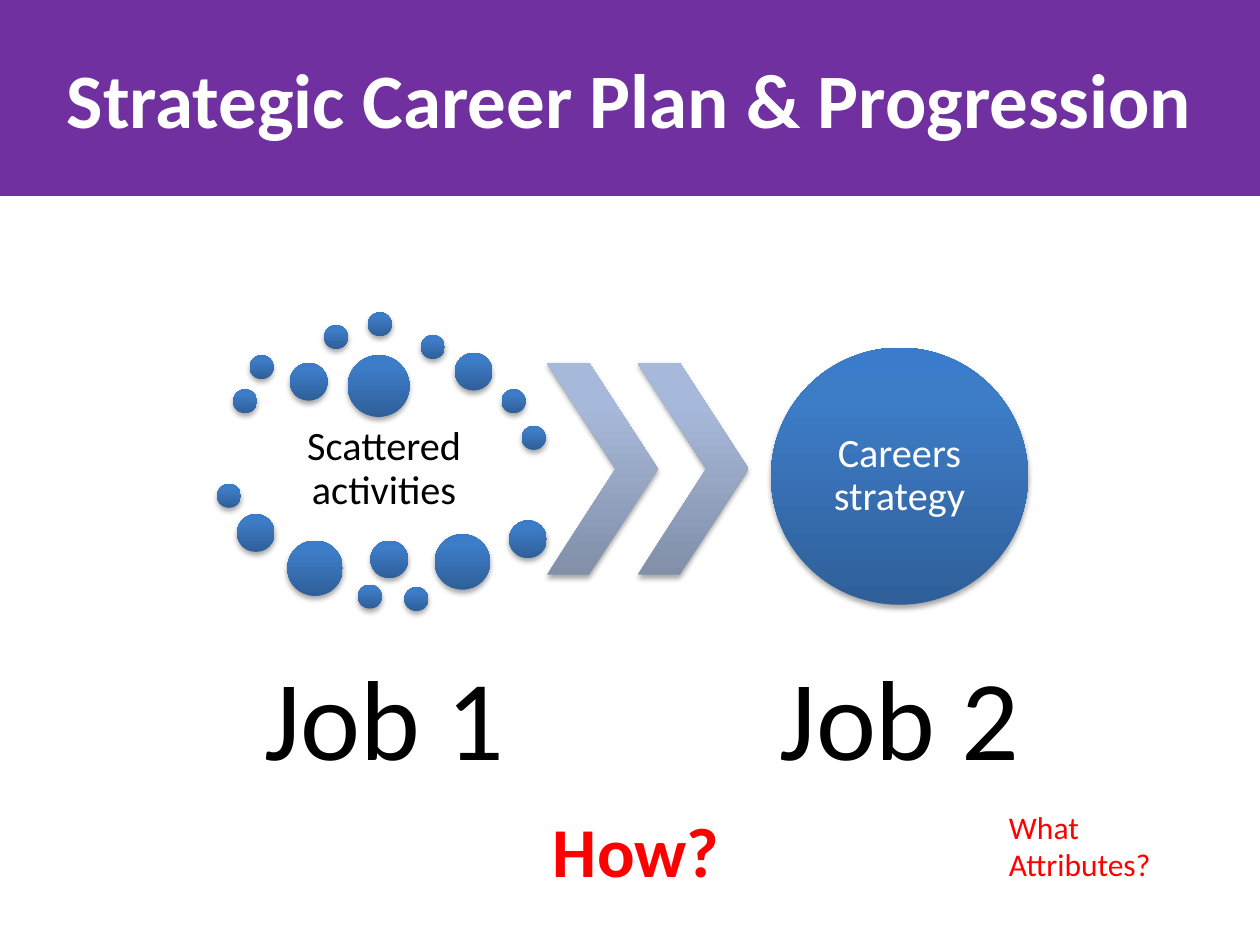
from copy import deepcopy

from lxml.etree import SubElement
from pptx import Presentation
from pptx.dml.color import RGBColor
from pptx.enum.shapes import MSO_SHAPE
from pptx.enum.text import MSO_ANCHOR, MSO_AUTO_SIZE, PP_ALIGN
from pptx.oxml.ns import qn
from pptx.util import Pt

PURPLE, WHITE, BLACK, RED = "7030A0", "FFFFFF", "000000", "FF0000"
# Gradient stops run from the bottom of a shape to its top.
BLUE_STOPS = [(0, "2F5F99"), (0.8, "3D7CC7"), (1, "3A7CCB")]
GREY_STOPS = [(0, "818FA8"), (0.8, "A7B9DA"), (1, "A7BADC")]

# Dot diameter: offsets of the dots from the corner of the scatter.
DOTS = {
    13.7: [(9.2, 44), (18.6, 24.5), (61.2, 7.3), (86.2, 0), (116.5, 13),
           (162.6, 44), (174.1, 64.9), (0, 98), (80.5, 155.6), (107.1, 157)],
    21.6: [(41.6, 28.9), (135.9, 23.1), (11.4, 115.3), (87.7, 130.4),
           (166.9, 118.9)],
    31.7: [(40.2, 130.4), (124.4, 126.8)],
    35.3: [(74.7, 24.5)],
}


def color(value):
    return RGBColor.from_string(value)


def write(frame, text, size, ink, bold=False, align=PP_ALIGN.CENTER,
          anchor=MSO_ANCHOR.MIDDLE, spacing=None, inset=None):
    frame.word_wrap = True
    frame.auto_size = MSO_AUTO_SIZE.NONE
    frame.vertical_anchor = anchor
    if inset is not None:
        frame.margin_left = frame.margin_right = Pt(inset)
        frame.margin_top = frame.margin_bottom = Pt(inset)
    para = frame.paragraphs[0]
    para.alignment = align
    if spacing:
        para.line_spacing = spacing
    span = para.add_run()
    span.text = text
    span.font.name = "Calibri"
    span.font.size = Pt(size)
    span.font.bold = bold
    span.font.color.rgb = color(ink)


def add_text(page, box, text, size, ink, **style):
    shape = page.shapes.add_textbox(*map(Pt, box))
    write(shape.text_frame, text, size, ink, **style)


def add_shadow(shape):
    """Add a soft shadow just below the shape."""
    shape.shadow.inherit = False
    effects = shape._element.spPr.find(qn("a:effectLst"))
    outer = SubElement(effects, qn("a:outerShdw"), blurRad=str(Pt(3.1)),
                       dist=str(Pt(1.8)), dir="5400000", rotWithShape="0")
    ink = SubElement(outer, qn("a:srgbClr"), val=BLACK)
    SubElement(ink, qn("a:alpha"), val="35000")


def add_glossy(page, kind, box, stops):
    """Add a shape with an upward gradient, no line and a shadow."""
    shape = page.shapes.add_shape(kind, *map(Pt, box))
    shape.fill.gradient()
    shape.fill.gradient_angle = 90
    last = shape._element.spPr.findall(".//" + qn("a:gs"))[-1]
    last.addnext(deepcopy(last))
    for stop, (position, ink) in zip(shape.fill.gradient_stops, stops):
        stop.position = position
        stop.color.rgb = color(ink)
    shape.line.fill.background()
    add_shadow(shape)
    return shape


def add_title(page, box):
    title = page.shapes.title
    title.left, title.top, title.width, title.height = map(Pt, box)
    title.fill.solid()
    title.fill.fore_color.rgb = color(PURPLE)
    title.line.color.rgb = color(PURPLE)
    title.line.width = Pt(0.75)
    write(title.text_frame, "Strategic Career Plan & Progression", 44, WHITE,
          bold=True)


def add_scatter(page, left, top):
    add_text(page, (left + 9.2, top + 61.3, 172.8, 56.9),
             "Scattered activities", 23, BLACK, spacing=0.9, inset=2.3)
    for size, offsets in DOTS.items():
        for x, y in offsets:
            add_glossy(page, MSO_SHAPE.OVAL, (left + x, top + y, size, size),
                       BLUE_STOPS)


def add_chevrons(page, left, top, width, height, step):
    for index in range(2):
        chevron = add_glossy(page, MSO_SHAPE.CHEVRON,
                             (left + index * step, top, width, height),
                             GREY_STOPS)
        chevron.adjustments[0] = 0.62


def add_strategy(page, left, top, size):
    add_glossy(page, MSO_SHAPE.OVAL, (left, top, size, size), BLUE_STOPS)
    edge = 21.6
    inner = size - 2 * edge
    add_text(page, (left + edge, top + edge, inner, inner),
             "Careers strategy", 23, WHITE, spacing=0.9, inset=0)


def add_jobs(page, lefts, top, width, height):
    for number, left in enumerate(lefts, 1):
        add_text(page, (left, top, width, height), f"Job {number}", 65, BLACK,
                 spacing=0.9, inset=6.5)


def add_questions(page, top):
    style = {"align": PP_ALIGN.LEFT, "anchor": MSO_ANCHOR.TOP}
    add_text(page, (308.9, top, 113, 55.4), "How?", 40, RED, bold=True, **style)
    add_text(page, (569.5, top, 136, 51.1), "What Attributes?", 18, RED, **style)


def main():
    deck = Presentation()
    deck.slide_width, deck.slide_height = Pt(720), Pt(540)
    page = deck.slides.add_slide(deck.slide_layouts[5])
    add_title(page, (0, 0, 720, 111.6))
    add_scatter(page, 124, 178.5)
    add_chevrons(page, 312.5, 207.4, 63.4, 121, step=51.8)
    add_strategy(page, 440.6, 198.7, 146.9)
    add_jobs(page, (133.2, 427.7), 360, 172.8, 106.6)
    add_questions(page, 457.9)
    deck.save("out.pptx")


if __name__ == "__main__":
    main()
